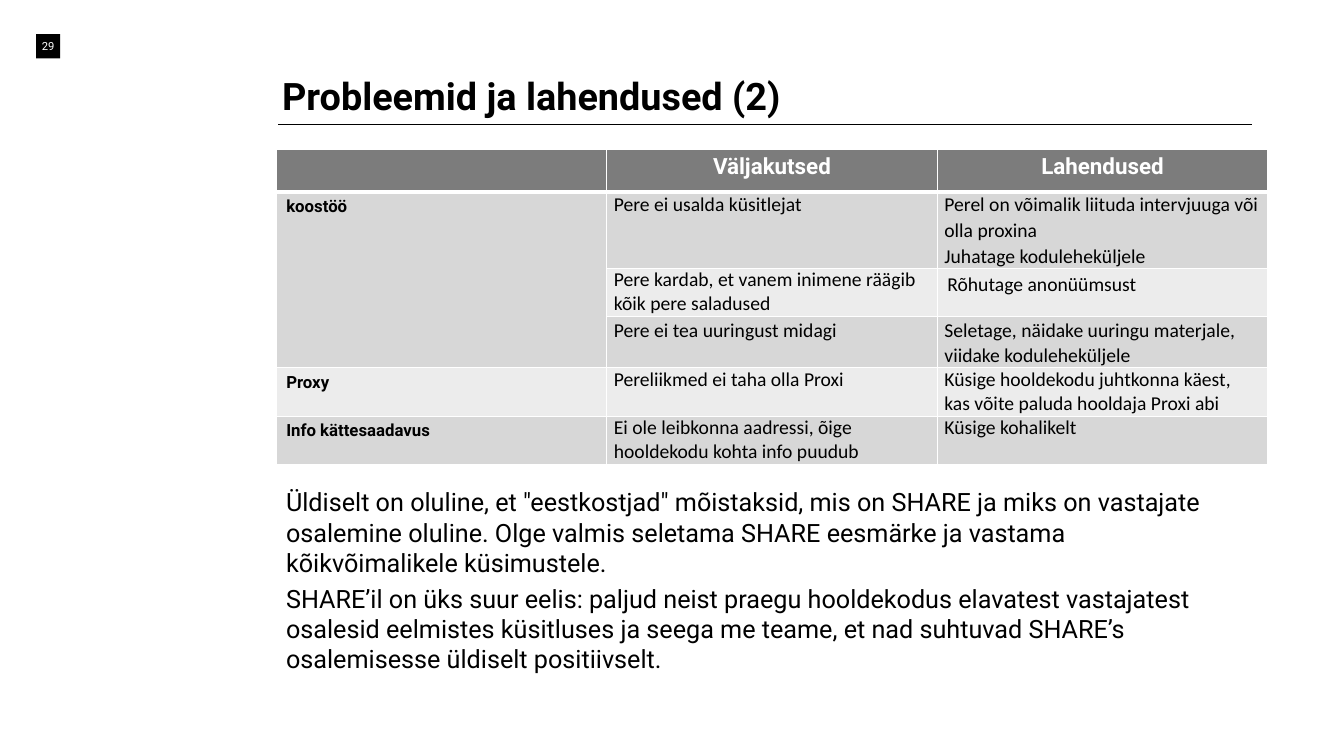
from lxml.etree import SubElement
from pptx import Presentation
from pptx.dml.color import RGBColor
from pptx.enum.shapes import MSO_CONNECTOR, MSO_SHAPE
from pptx.enum.text import MSO_ANCHOR, PP_ALIGN
from pptx.oxml import parse_xml
from pptx.oxml.ns import nsdecls, qn
from pptx.util import Cm, Pt

COLORS = {"black": "000000", "white": "FFFFFF", "header": "7C7C7C",
          "dark": "D7D7D7", "light": "ECECEC"}

FONTS = {
    "title": {"name": "Roboto", "size": Pt(27), "bold": True},
    "number": {"name": "Roboto", "size": Pt(8), "bold": False},
    "header": {"name": "Roboto", "size": Pt(16), "bold": True},
    "topic": {"name": "Roboto", "size": Pt(12), "bold": True},
    "detail": {"name": "Calibri", "size": Pt(14), "bold": False},
    "summary": {"name": "Roboto", "size": Pt(18), "bold": False},
}

TIGHT = {"margin_left": Cm(0.18), "margin_right": Cm(0.18),
         "margin_top": 0, "margin_bottom": 0}


def write(frame, lines, style, color="black", **layout):
    """Fill a text frame with one styled paragraph per line."""
    frame.word_wrap = True
    for index, line in enumerate(lines):
        paragraph = frame.paragraphs[0] if index == 0 else frame.add_paragraph()
        for name, value in layout.items():
            if index or name != "space_before":
                setattr(paragraph, name, value)
        run = paragraph.add_run()
        run.text = line
        for name, value in FONTS[style].items():
            setattr(run.font, name, value)
        run.font.color.rgb = RGBColor.from_string(COLORS[color])


def paint(cell, color, top, bottom):
    """Give a cell white borders (widths in points) and a plain fill."""
    properties = cell._tc.get_or_add_tcPr()
    for side, width in {"L": 1, "R": 1, "T": top, "B": bottom}.items():
        properties.append(parse_xml(
            f'<a:ln{side} {nsdecls("a")} w="{Pt(width)}"><a:solidFill>'
            f'<a:srgbClr val="{COLORS["white"]}"/></a:solidFill></a:ln{side}>'))
    cell.fill.solid()
    cell.fill.fore_color.rgb = RGBColor.from_string(COLORS[color])


presentation = Presentation()
presentation.slide_width, presentation.slide_height = Cm(33.87), Cm(19.05)
slide = presentation.slides.add_slide(presentation.slide_layouts[6])

# Rule under the title
rule = slide.shapes.add_connector(
    MSO_CONNECTOR.STRAIGHT, Cm(7.01), Cm(3.13), Cm(31.55), Cm(3.13))
rule.line.width = Pt(0.5)
rule.line.color.rgb = RGBColor.from_string(COLORS["black"])
SubElement(rule._element.spPr, qn("a:effectLst"))

# Challenges and solutions; each cell is a list of paragraphs
HEADINGS = ["Väljakutsed", "Lahendused"]
PROBLEMS = [
    ("koostöö", ["Pere ei usalda küsitlejat"],
     ["Perel on võimalik liituda intervjuuga või olla proxina",
      "Juhatage koduleheküljele"]),
    ("", ["Pere kardab, et vanem inimene räägib kõik pere saladused"],
     ["Rõhutage anonüümsust"]),
    ("", ["Pere ei tea uuringust midagi"],
     ["Seletage, näidake uuringu materjale, viidake koduleheküljele"]),
    ("Proxy", ["Pereliikmed ei taha olla Proxi"],
     ["Küsige hooldekodu juhtkonna käest, kas võite paluda hooldaja Proxi abi"]),
    ("Info kättesaadavus",
     ["Ei ole leibkonna aadressi, õige hooldekodu kohta info puudub"],
     ["Küsige kohalikelt"]),
]
ROW_HEIGHTS = [1.07, 1.93, 1.22, 1.27, 1.22, 1.22]
LOOSE_ROWS = {1, 3}
ROOMY_CELL = (2, 2)

table = slide.shapes.add_table(
    len(ROW_HEIGHTS), 3, Cm(6.96), Cm(3.76), Cm(25), Cm(sum(ROW_HEIGHTS))).table
for column in table.columns:
    column.width = Cm(8.33)
for row, height in zip(table.rows, ROW_HEIGHTS):
    row.height = Cm(height)

for column in range(3):
    paint(table.cell(0, column), "header", 1, 3)
for column, heading in enumerate(HEADINGS, 1):
    write(table.cell(0, column).text_frame, [heading], "header", "white",
          alignment=PP_ALIGN.CENTER)

for row, (topic, challenge, solution) in enumerate(PROBLEMS, 1):
    shade = "dark" if row % 2 else "light"
    for column in range(3):
        # The merged topic keeps the shade of its first row
        paint(table.cell(row, column), shade if column or topic else "dark",
              3 if row == 1 else 1, 1)
    if topic:
        write(table.cell(row, 0).text_frame, [topic], "topic")
    for column, lines in enumerate((challenge, solution), 1):
        cell = table.cell(row, column)
        if (row, column) != ROOMY_CELL:
            for name, value in TIGHT.items():
                setattr(cell, name, value)
        write(cell.text_frame, lines, "detail",
              line_spacing=1.07 if row in LOOSE_ROWS else 1.0)
table.cell(1, 0).merge(table.cell(3, 0))

# Title
title = slide.shapes.add_textbox(Cm(7.01), Cm(0.84), Cm(24.54), Cm(2.26)).text_frame
for name in ("margin_left", "margin_top", "margin_right", "margin_bottom"):
    setattr(title, name, Cm(0.1))
title.vertical_anchor = MSO_ANCHOR.BOTTOM
write(title, ["Probleemid ja lahendused (2)"], "title", line_spacing=0.9)

# Page number
badge = slide.shapes.add_shape(
    MSO_SHAPE.RECTANGLE, Cm(0.91), Cm(0.86), Cm(0.61), Cm(0.61))
badge.shadow.inherit = False
badge.fill.solid()
badge.fill.fore_color.rgb = RGBColor.from_string(COLORS["black"])
badge.line.fill.background()
number = badge.text_frame
for name in ("margin_left", "margin_top", "margin_right", "margin_bottom"):
    setattr(number, name, 0)
number.vertical_anchor = MSO_ANCHOR.MIDDLE
write(number, ["29"], "number", "white", alignment=PP_ALIGN.CENTER)

# Summary
summary = slide.shapes.add_textbox(Cm(6.96), Cm(12.14), Cm(24.54), Cm(6.07))
write(summary.text_frame, [
    'Üldiselt on oluline, et "eestkostjad" mõistaksid, mis on SHARE ja miks on '
    "vastajate osalemine oluline. Olge valmis seletama SHARE eesmärke ja vastama "
    "kõikvõimalikele küsimustele.",
    "SHARE’il on üks suur eelis: paljud neist praegu hooldekodus elavatest "
    "vastajatest osalesid eelmistes küsitluses ja seega me teame, et nad suhtuvad "
    "SHARE’s osalemisesse üldiselt positiivselt.",
], "summary", space_before=Pt(4))

presentation.save("out.pptx")
